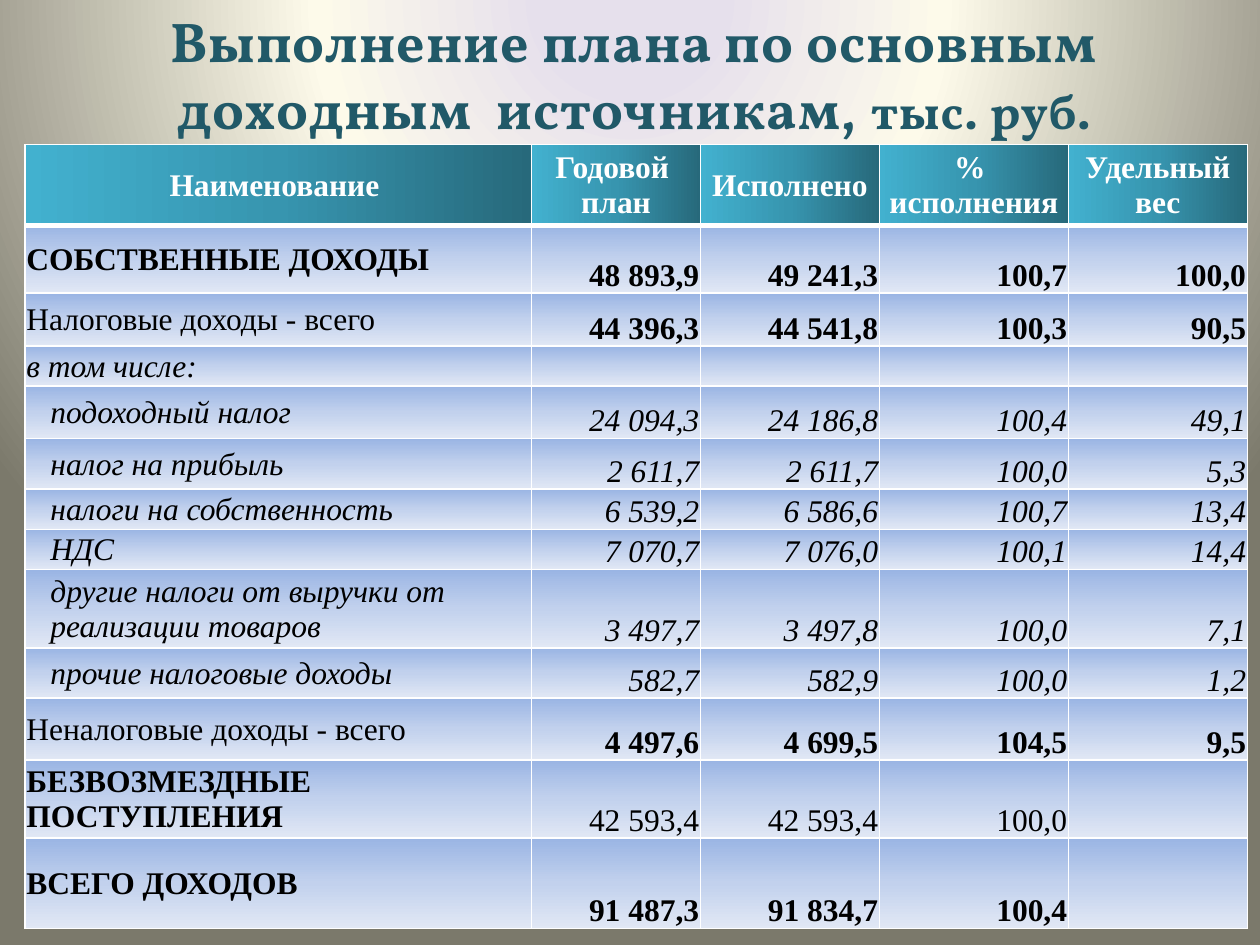
from lxml.etree import SubElement
from pptx import Presentation
from pptx.dml.color import RGBColor
from pptx.enum.text import MSO_ANCHOR, MSO_AUTO_SIZE, PP_ALIGN
from pptx.oxml.ns import qn
from pptx.util import Inches, Pt

COLORS = {
    "title": "215968", "white": "FFFFFF", "black": "000000",
    "header": [(0, "27697B"), (50, "3795AF"), (100, "42B1CF")],
    "body": [(0, "9AB5E4"), (50, "C2D1ED"), (100, "E1E8F5")],
    "background": [(11, "E6E0EC"), (40, "FDFAEA"), (100, "7B796B")],
}
TITLE_FONT, TABLE_FONT = "Vollkorn", "Times New Roman"

COLUMN_WIDTHS = [4.02, 1.34, 1.42, 1.5, 1.42]
ROW_HEIGHTS = [0.64, 0.54, 0.42, 0.31, 0.42, 0.4, 0.32, 0.32, 0.62, 0.4, 0.49, 0.62, 0.72]
HEADER = ["Наименование\u00a0", "Годовой \nплан", "Исполнено", "% \nисполнения", "Удельный вес"]

# Row kinds: label style, figure style, left indent of the label
BOLD, PLAIN, ITALIC = ({"bold": True, "italic": False}, {"bold": False, "italic": False},
                       {"bold": False, "italic": True})
KINDS = {
    "total": (BOLD, BOLD, 0.01),
    "group": (PLAIN, BOLD, 0.01),
    "note": (ITALIC, ITALIC, 0.01),
    "item": (ITALIC, ITALIC, 0.2),
    "grant": (BOLD, PLAIN, 0.01),
}
ROWS = [
    ("total", "СОБСТВЕННЫЕ ДОХОДЫ", "48 893,9", "49 241,3", "100,7", "100,0"),
    ("group", "Налоговые доходы - всего", "44 396,3", "44 541,8", "100,3", "90,5"),
    ("note", "в том числе:", "", "", "", ""),
    ("item", "подоходный налог", "24 094,3", "24 186,8", "100,4", "49,1"),
    ("item", "налог на прибыль", "2 611,7", "2 611,7", "100,0", "5,3"),
    ("item", "налоги на собственность", "6 539,2", "6 586,6", "100,7", "13,4"),
    ("item", "НДС", "7 070,7", "7 076,0", "100,1", "14,4"),
    ("item", "другие налоги от выручки от реализации товаров",
     "3 497,7", "3 497,8", "100,0", "7,1"),
    ("item", "прочие налоговые доходы", "582,7", "582,9", "100,0", "1,2"),
    ("group", "Неналоговые доходы - всего", "4 497,6", "4 699,5", "104,5", "9,5"),
    ("grant", "БЕЗВОЗМЕЗДНЫЕ ПОСТУПЛЕНИЯ", "42 593,4", "42 593,4", "100,0", ""),
    ("total", "ВСЕГО ДОХОДОВ", "91 487,3", "91 834,7", "100,4", ""),
]


def set_all(target, values):
    for name, value in values.items():
        setattr(target, name, value)


def add_gradient(parent, stops, angle=None):
    gradient = SubElement(parent, qn("a:gradFill"), rotWithShape="1")
    stop_list = SubElement(gradient, qn("a:gsLst"))
    for position, color in stops:
        stop = SubElement(stop_list, qn("a:gs"), pos=str(position * 1000))
        SubElement(stop, qn("a:srgbClr"), val=color)
    if angle is not None:
        SubElement(gradient, qn("a:lin"), ang=str(angle * 60000), scaled="0")
    return gradient


class SlideBuilder:
    def __init__(self, presentation):
        self.width, self.height = presentation.slide_width, presentation.slide_height
        self.slide = presentation.slides.add_slide(presentation.slide_layouts[5])

    def place(self, shape, left, top, width, height):
        """Place a shape by shares of the slide's size."""
        set_all(shape, {"left": int(left * self.width), "top": int(top * self.height),
                        "width": int(width * self.width), "height": int(height * self.height)})

    def style_run(self, run, color, **values):
        set_all(run.font, values)
        run.font.color.rgb = RGBColor.from_string(color)

    def background(self, stops):
        self.slide.background.fill.solid()
        properties = self.slide._element.cSld.find(qn("p:bg")).find(qn("p:bgPr"))
        properties.remove(properties.find(qn("a:solidFill")))
        gradient = add_gradient(properties, stops)
        path = SubElement(gradient, qn("a:path"), {"path": "circle"})
        SubElement(path, qn("a:fillToRect"), l="50000", t="-80000", r="50000", b="180000")
        properties.insert(0, gradient)

    def title(self, parts, *box):
        title = self.slide.shapes.title
        self.place(title, *box)
        set_all(title.text_frame, {"word_wrap": True, "auto_size": MSO_AUTO_SIZE.NONE,
                                   "vertical_anchor": MSO_ANCHOR.MIDDLE})
        paragraph = title.text_frame.paragraphs[0]
        paragraph.alignment = PP_ALIGN.CENTER
        for text, size in parts:
            run = paragraph.add_run()
            run.text = text
            self.style_run(run, COLORS["title"], name=TITLE_FONT, size=Pt(size), bold=True)
            run.font._element.set("spc", "50")

    def table(self, left, top, widths, heights):
        frame = self.slide.shapes.add_table(
            len(heights), len(widths), int(left * self.width), int(top * self.height),
            Inches(sum(widths)), Inches(sum(heights)))
        table = frame.table
        table.horz_banding = False
        for column, width in zip(table.columns, widths):
            column.width = Inches(width)
        for row, height in zip(table.rows, heights):
            row.height = Inches(height)
        return table

    def cell(self, cell, text, alignment, anchor, stops, angle, color,
             indent=0.01, bottom_line=1, **font):
        set_all(cell, {"vertical_anchor": anchor, "margin_left": Inches(indent),
                       "margin_top": Inches(0.01), "margin_right": Inches(0.01),
                       "margin_bottom": 0})
        # Borders come before the fill in the cell properties
        properties = cell._tc.get_or_add_tcPr()
        for side, points in zip("LRTB", (1, 1, 1, bottom_line)):
            line = SubElement(properties, qn(f"a:ln{side}"), w=str(Pt(points)))
            fill = SubElement(line, qn("a:solidFill"))
            SubElement(fill, qn("a:srgbClr"), val=COLORS["white"])
        add_gradient(properties, stops, angle)
        if not text:
            return
        cell.text = text
        for paragraph in cell.text_frame.paragraphs:
            paragraph.alignment = alignment
            for run in paragraph.runs:
                self.style_run(run, color, name=TABLE_FONT, size=Pt(18), **font)


def main():
    presentation = Presentation()
    set_all(presentation, {"slide_width": Inches(10), "slide_height": Inches(7.5)})
    builder = SlideBuilder(presentation)

    # Background and title
    builder.background(COLORS["background"])
    builder.title([("Выполнение плана по основным доходным  источникам, ", 32),
                   ("тыс. руб.", 28)], 0.023, 0, 0.961, 0.156)

    # Table header
    table = builder.table(0.02, 0.153, COLUMN_WIDTHS, ROW_HEIGHTS)
    for column, text in enumerate(HEADER):
        builder.cell(table.cell(0, column), text, PP_ALIGN.CENTER, MSO_ANCHOR.MIDDLE,
                     COLORS["header"], 180, COLORS["white"], bottom_line=3, **BOLD)

    # Income rows
    for row, (kind, label, *figures) in enumerate(ROWS, start=1):
        label_style, figure_style, indent = KINDS[kind]
        builder.cell(table.cell(row, 0), label, PP_ALIGN.LEFT, MSO_ANCHOR.MIDDLE,
                     COLORS["body"], 90, COLORS["black"], indent, **label_style)
        for column, figure in enumerate(figures, start=1):
            builder.cell(table.cell(row, column), figure, PP_ALIGN.RIGHT, MSO_ANCHOR.BOTTOM,
                         COLORS["body"], 90, COLORS["black"], **figure_style)

    presentation.save("out.pptx")


if __name__ == "__main__":
    main()
